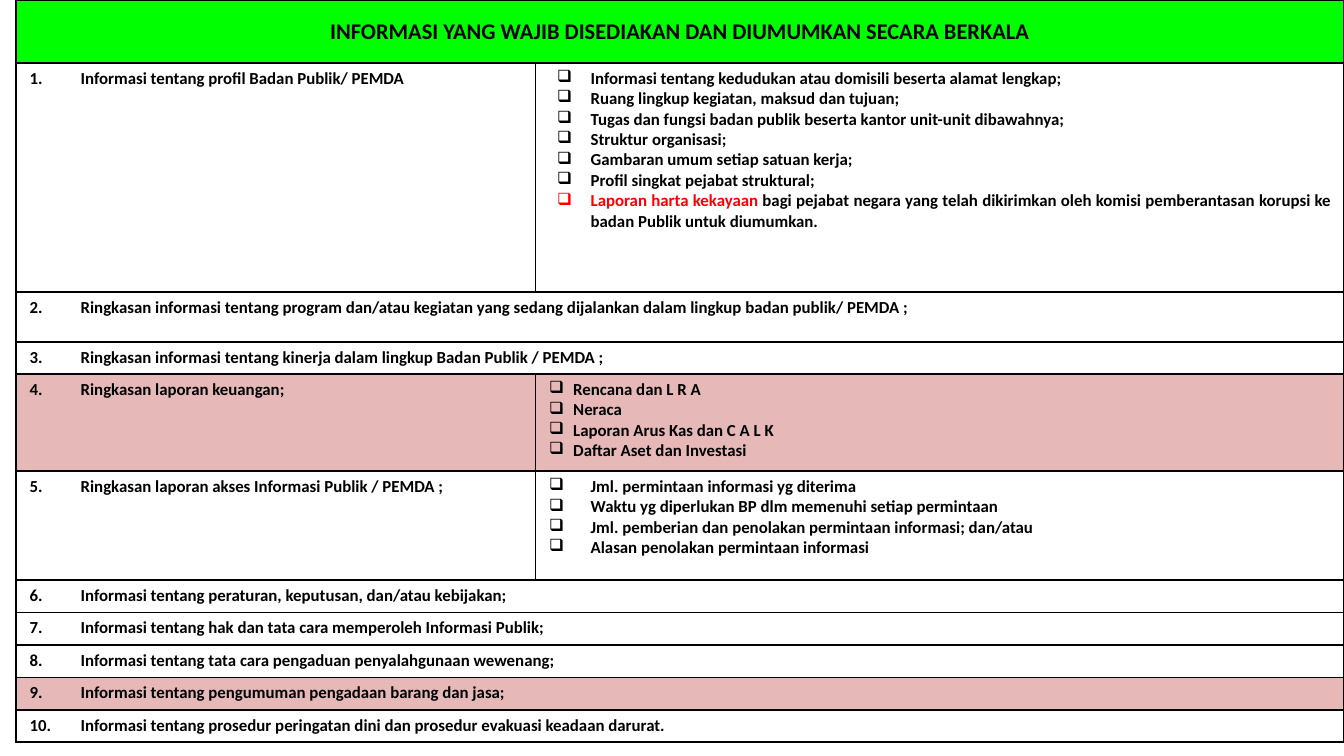
from lxml.etree import SubElement
from pptx import Presentation
from pptx.dml.color import RGBColor
from pptx.enum.text import MSO_ANCHOR, PP_ALIGN
from pptx.oxml.ns import qn
from pptx.util import Inches, Pt

THEME = {
    "font": "Calibri", "title_size": Pt(12), "body_size": Pt(9),
    "ink": "000000", "alert": "FF0000",
    "title_fill": "00FF00", "highlight": "E6B9B8", "border": Pt(1),
}
MARGINS = {"margin_left": Inches(0.1), "margin_right": Inches(0.1),
           "margin_top": Inches(0.04), "margin_bottom": Inches(0.04)}

# Paragraph layouts: left margin, hanging indent, level and tab stop
NUMBERED = {"margin": 0.38, "indent": -0.38}
PROFILE = {"margin": 0.31, "indent": -0.25, "level": 1}
FINANCE = {"margin": 0.18, "indent": -0.31, "tab": 0.19}
ACCESS = {"margin": 0.31, "indent": -0.31}

TITLE = "INFORMASI YANG WAJIB DISEDIAKAN DAN DIUMUMKAN SECARA BERKALA"
TITLE_SHARE = 0.0834
LINE_SHARE = 0.0429
LEFT_SHARE = 0.012
COLUMN_SHARES = (0.3865, 0.6015)

# Topic, share of the slide height, highlighted, detail layout, details
TOPICS = [
    ("Informasi tentang profil Badan Publik/ PEMDA", 0.3032, False, PROFILE, [
        "Informasi tentang kedudukan atau domisili beserta alamat lengkap;",
        "Ruang lingkup kegiatan, maksud dan tujuan;",
        "Tugas dan fungsi badan publik beserta kantor unit-unit dibawahnya;",
        "Struktur organisasi;",
        "Gambaran umum setiap satuan kerja;",
        "Profil singkat pejabat struktural;",
        ("Laporan harta kekayaan ",
         "bagi pejabat negara yang telah dikirimkan oleh komisi pemberantasan "
         "korupsi ke badan Publik untuk diumumkan."),
    ]),
    ("Ringkasan informasi tentang program dan/atau kegiatan yang sedang dijalankan "
     "dalam lingkup badan publik/ PEMDA ;", 0.0656, False, None, []),
    ("Ringkasan informasi tentang kinerja dalam lingkup Badan Publik / PEMDA ;",
     LINE_SHARE, False, None, []),
    ("Ringkasan laporan keuangan;", 0.1284, True, FINANCE, [
        "Rencana dan L R A",
        "Neraca",
        "Laporan Arus Kas dan C A L K",
        "Daftar Aset dan Investasi",
    ]),
    ("Ringkasan laporan akses Informasi Publik / PEMDA ;", 0.1443, False, ACCESS, [
        "Jml. permintaan informasi yg diterima",
        "Waktu yg diperlukan BP dlm memenuhi setiap permintaan",
        "Jml. pemberian dan penolakan permintaan informasi; dan/atau ",
        "Alasan penolakan permintaan informasi",
    ]),
    ("Informasi tentang peraturan, keputusan, dan/atau kebijakan;",
     LINE_SHARE, False, None, []),
    ("Informasi tentang hak dan tata cara memperoleh Informasi Publik;",
     LINE_SHARE, False, None, []),
    ("Informasi tentang tata cara pengaduan penyalahgunaan wewenang;",
     LINE_SHARE, False, None, []),
    ("Informasi tentang pengumuman pengadaan barang dan jasa;",
     LINE_SHARE, True, None, []),
    ("Informasi tentang prosedur peringatan dini dan prosedur evakuasi keadaan darurat.",
     LINE_SHARE, False, None, []),
]


def style_cell(cell, fill=None):
    """Set margins, black borders and the fill of one cell."""
    for name, value in MARGINS.items():
        setattr(cell, name, value)
    properties = cell._tc.get_or_add_tcPr()
    for side in ("a:lnL", "a:lnR", "a:lnT", "a:lnB"):
        line = SubElement(properties, qn(side), w=str(THEME["border"]))
        ink = SubElement(line, qn("a:solidFill"))
        SubElement(ink, qn("a:srgbClr"), val=THEME["ink"])
    if fill:
        cell.fill.solid()
        cell.fill.fore_color.rgb = RGBColor.from_string(fill)
    else:
        cell.fill.background()


def write(paragraph, runs, layout=None, number=None, size=THEME["body_size"]):
    """Write (text, colour) runs, with a number or a box bullet if laid out."""
    paragraph.alignment = PP_ALIGN.JUSTIFY if layout else PP_ALIGN.CENTER
    if layout:
        paragraph.level = layout.get("level", 0)
        properties = paragraph._p.get_or_add_pPr()
        properties.set("marL", str(Inches(layout["margin"])))
        properties.set("indent", str(Inches(layout["indent"])))
        if number:
            SubElement(properties, qn("a:buAutoNum"), type="arabicPeriod", startAt=str(number))
        else:
            SubElement(properties, qn("a:buChar"), char="❑")
        if "tab" in layout:
            stops = SubElement(properties, qn("a:tabLst"))
            SubElement(stops, qn("a:tab"), pos=str(Inches(layout["tab"])), algn="l")
    for text, colour in runs:
        run = paragraph.add_run()
        run.text = text
        for name, value in {"name": THEME["font"], "size": size, "bold": True}.items():
            setattr(run.font, name, value)
        run.font.color.rgb = RGBColor.from_string(colour)


# Widescreen slide, 16 by 9
presentation = Presentation()
width = Inches(10)
height = width * 9 // 16
presentation.slide_width, presentation.slide_height = width, height
slide = presentation.slides.add_slide(presentation.slide_layouts[6])

# Table grid
row_shares = [TITLE_SHARE] + [topic[1] for topic in TOPICS]
register = slide.shapes.add_table(
    len(row_shares), len(COLUMN_SHARES), int(width * LEFT_SHARE), 0,
    int(width * sum(COLUMN_SHARES)), int(height * sum(row_shares))).table
for column, share in zip(register.columns, COLUMN_SHARES):
    column.width = int(width * share)
for row, share in zip(register.rows, row_shares):
    row.height = int(height * share)

# Title row
heading, heading_end = register.rows[0].cells
for cell in (heading, heading_end):
    style_cell(cell, THEME["title_fill"])
heading.merge(heading_end)
heading.vertical_anchor = MSO_ANCHOR.MIDDLE
write(heading.text_frame.paragraphs[0], [(TITLE, THEME["ink"])], size=THEME["title_size"])

# Numbered topics, with their details on the right or spanning both columns
for number, (topic, _, highlighted, layout, details) in enumerate(TOPICS, 1):
    topic_cell, detail_cell = register.rows[number].cells
    for cell in (topic_cell, detail_cell):
        style_cell(cell, THEME["highlight"] if highlighted else None)
    write(topic_cell.text_frame.paragraphs[0], [(topic, THEME["ink"])], NUMBERED, number)
    if not details:
        topic_cell.merge(detail_cell)
    for index, detail in enumerate(details):
        frame = detail_cell.text_frame
        paragraph = frame.add_paragraph() if index else frame.paragraphs[0]
        if isinstance(detail, tuple):
            runs = list(zip(detail, (THEME["alert"], THEME["ink"])))
        else:
            runs = [(detail, THEME["ink"])]
        write(paragraph, runs, layout)

presentation.save("out.pptx")
